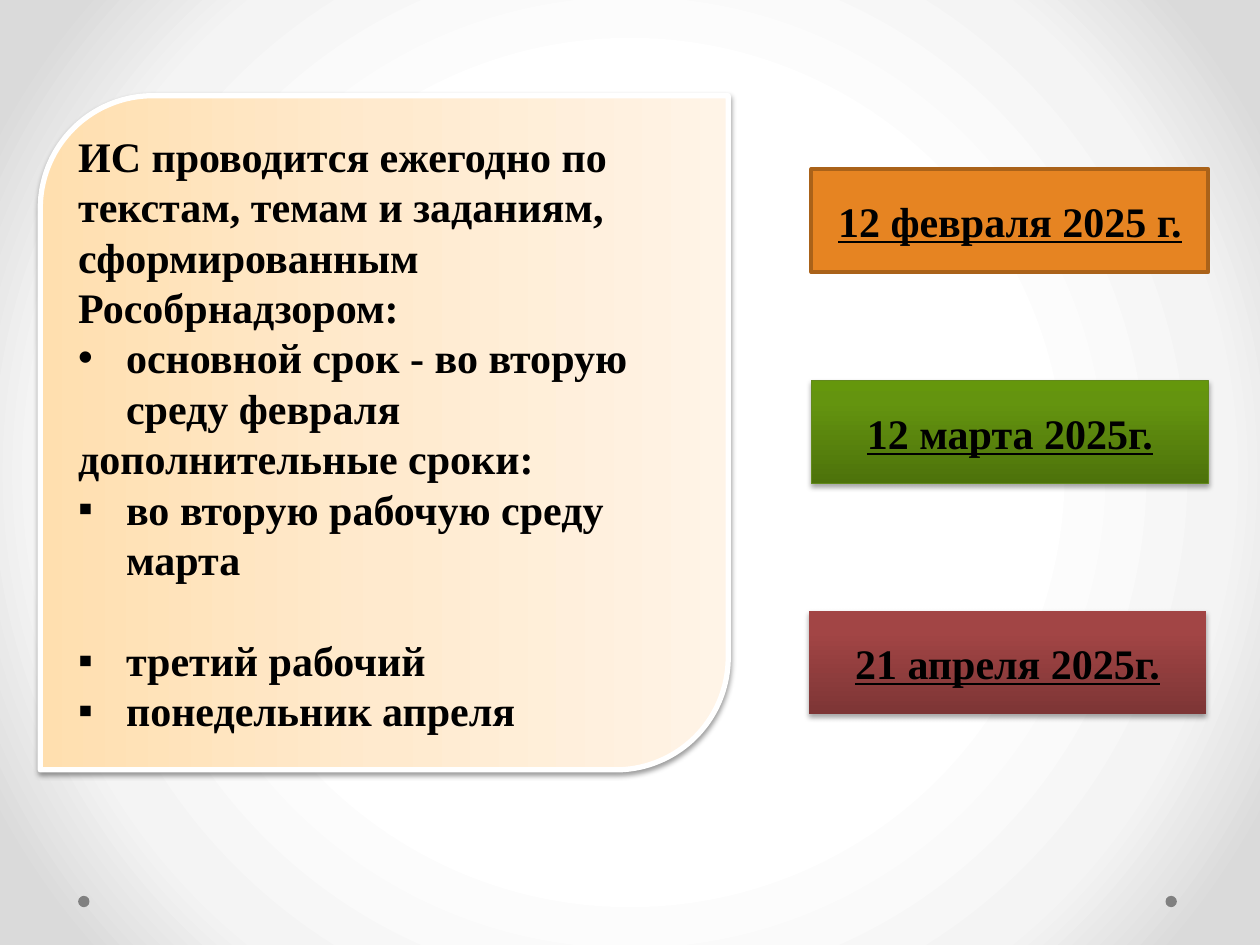
import lxml.etree
import pptx
import pptx.dml.color
import pptx.enum.dml
import pptx.enum.shapes
import pptx.enum.text
import pptx.oxml.ns
import pptx.util

Inches = pptx.util.Inches
Pt = pptx.util.Pt
RGBColor = pptx.dml.color.RGBColor
SHAPES = pptx.enum.shapes.MSO_SHAPE
ALIGN = pptx.enum.text.PP_ALIGN
MIDDLE = pptx.enum.text.MSO_ANCHOR.MIDDLE
qn = pptx.oxml.ns.qn
SubElement = lxml.etree.SubElement

BLACK = RGBColor(0x00, 0x00, 0x00)
WHITE = RGBColor(0xFF, 0xFF, 0xFF)
GRAY = RGBColor(0x80, 0x80, 0x80)
ORANGE = RGBColor(0xE6, 0x84, 0x22)
BROWN = RGBColor(0xAA, 0x62, 0x19)
GREEN_EDGE = RGBColor(0x62, 0x89, 0x1C)
BACKDROP = [(50, WHITE), (76, RGBColor(0xF4, 0xF4, 0xF4)), (92, RGBColor(0xDA, 0xDA, 0xDA))]
PEACH = [(0, RGBColor(0xFF, 0xDF, 0xAF)), (50, RGBColor(0xFF, 0xEA, 0xCE)), (100, RGBColor(0xFF, 0xF4, 0xE7))]
GREEN = [(0, RGBColor(0x4D, 0x72, 0x0B)), (80, RGBColor(0x64, 0x94, 0x0F)), (100, RGBColor(0x65, 0x97, 0x0C))]
RED = [(0, RGBColor(0x7D, 0x35, 0x35)), (80, RGBColor(0xA2, 0x45, 0x45)), (100, RGBColor(0xA4, 0x43, 0x43))]


def paint_gradient(fill, owner, stops, angle=None):
    fill.gradient()
    gradient = next(owner.iter(qn("a:gradFill")))
    gradient.clear()
    gradient.set("rotWithShape", "1")
    stop_list = SubElement(gradient, qn("a:gsLst"))
    for position, color in stops:
        stop = SubElement(stop_list, qn("a:gs"), pos=str(position * 1000))
        SubElement(stop, qn("a:srgbClr"), val=str(color))
    if angle is None:
        circle = SubElement(gradient, qn("a:path"), path="circle")
        SubElement(circle, qn("a:fillToRect"), l="50000", t="50000", r="50000", b="50000")
    else:
        SubElement(gradient, qn("a:lin"), ang=str(angle * 60000), scaled="0")


def write_text(para, text, align=ALIGN.LEFT, underline=False, bullet=None, space_after=0):
    para.alignment = align
    para.space_after = Pt(space_after)
    if bullet:
        properties = para._p.get_or_add_pPr()
        properties.set("marL", str(Inches(0.38)))
        properties.set("indent", str(-Inches(0.38)))
        SubElement(properties, qn("a:buFont"), typeface="Arial")
        SubElement(properties, qn("a:buChar"), char=bullet)
    span = para.add_run()
    span.text = text
    span.font.name = "Times New Roman"
    span.font.size = Pt(24)
    span.font.bold = True
    span.font.underline = underline
    span.font.color.rgb = BLACK


deck = pptx.Presentation()
deck.slide_width = Inches(10)
deck.slide_height = Inches(7.5)
page = deck.slides.add_slide(deck.slide_layouts[6])
paint_gradient(page.background.fill, page._element, BACKDROP)

for left in (9.25, 0.62):
    dot = page.shapes.add_shape(SHAPES.OVAL, Inches(left), Inches(7.11), Inches(0.09), Inches(0.09))
    dot.shadow.inherit = False
    dot.fill.solid()
    dot.fill.fore_color.rgb = GRAY
    dot.line.fill.background()

rules = [
    ("ИС проводится ежегодно по текстам, темам и заданиям, сформированным Рособрнадзором:", None, 0),
    ("основной срок - во вторую среду февраля", "•", 0),
    ("дополнительные сроки:", None, 0),
    ("во вторую рабочую среду марта", "▪", 28.8),
    ("третий рабочий", "▪", 0),
    ("понедельник апреля", "▪", 0),
]
panel = page.shapes.add_shape(SHAPES.ROUND_2_DIAG_RECTANGLE, Inches(0.32), Inches(0.76), Inches(5.46), Inches(5.35))
panel.shadow.inherit = False
paint_gradient(panel.fill, panel._element, PEACH, angle=0)
panel.line.color.rgb = WHITE
panel.line.width = Pt(3)
frame = panel.text_frame
frame.word_wrap = True
frame.vertical_anchor = MIDDLE
frame.margin_left = frame.margin_right = frame.margin_top = frame.margin_bottom = Inches(0.04)
for index, (text, bullet, gap) in enumerate(rules):
    para = frame.add_paragraph() if index else frame.paragraphs[0]
    write_text(para, text, bullet=bullet, space_after=gap)

shadowed = [(panel, 38, 1.6)]
dates = [
    ("12 февраля 2025 г.", 6.44, 1.34, None, BROWN, 2.25),
    ("12 марта 2025г.", 6.44, 3.02, GREEN, GREEN_EDGE, 0.75),
    ("21 апреля 2025г.", 6.42, 4.85, RED, None, 0),
]
for text, left, top, stops, edge, width in dates:
    box = page.shapes.add_shape(SHAPES.RECTANGLE, Inches(left), Inches(top), Inches(3.15), Inches(0.82))
    box.shadow.inherit = False
    if stops:
        paint_gradient(box.fill, box._element, stops, angle=270)
        shadowed.append((box, 35, 1.8))
    else:
        box.fill.solid()
        box.fill.fore_color.rgb = ORANGE
    if edge:
        box.line.color.rgb = edge
        box.line.width = Pt(width)
    else:
        box.line.fill.background()
    box.text_frame.word_wrap = True
    box.text_frame.vertical_anchor = MIDDLE
    write_text(box.text_frame.paragraphs[0], text, align=ALIGN.CENTER, underline=True)

for shape, opacity, distance in shadowed:
    effects = next(shape._element.iter(qn("a:effectLst")))
    shadow = SubElement(effects, qn("a:outerShdw"), blurRad=str(Pt(3.1)), dist=str(Pt(distance)),
                        dir="5400000", rotWithShape="0")
    color = SubElement(shadow, qn("a:srgbClr"), val=str(BLACK))
    SubElement(color, qn("a:alpha"), val=str(opacity * 1000))

deck.save("out.pptx")
